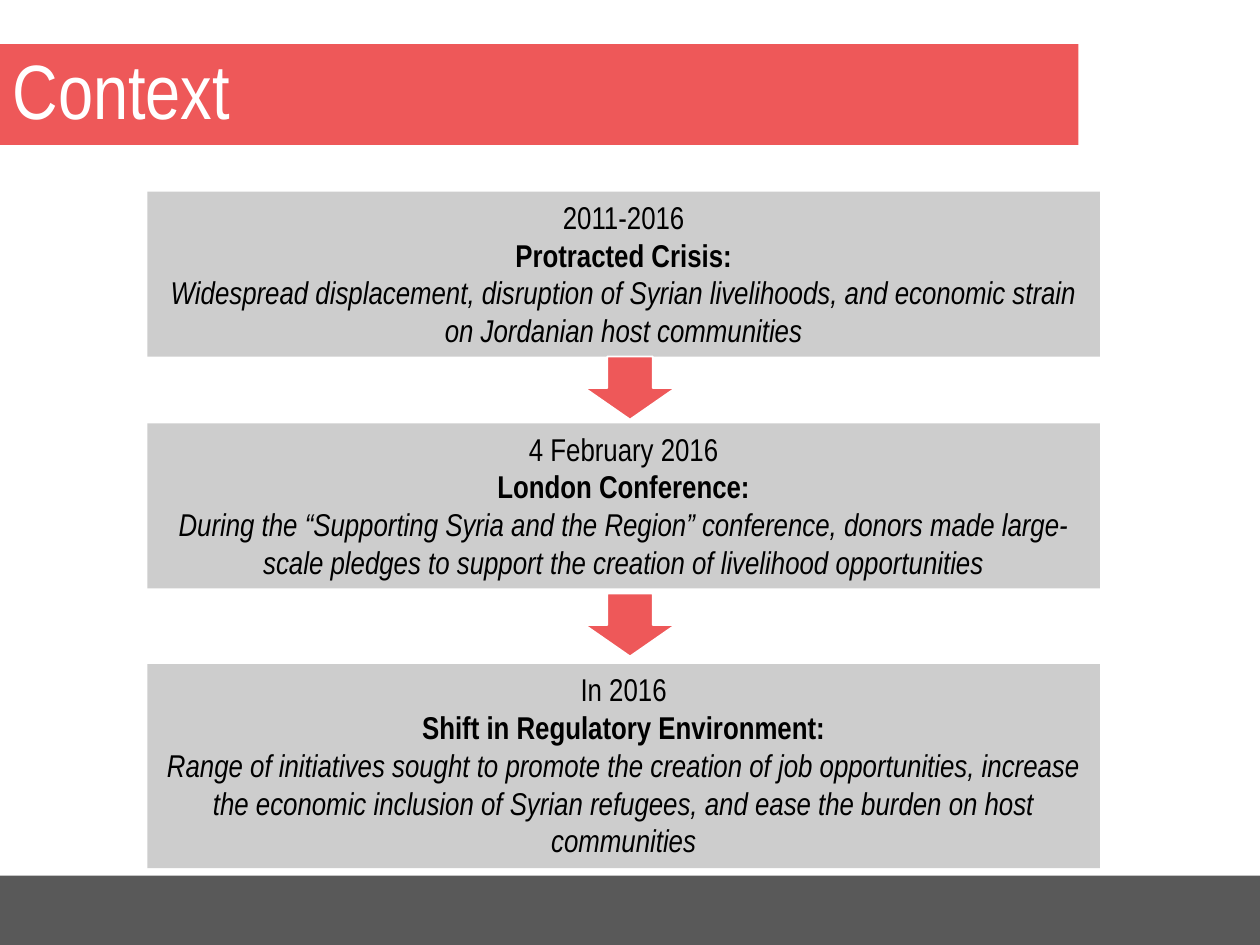
from pptx import Presentation
from pptx.dml.color import RGBColor
from pptx.enum import shapes, text
from pptx.util import Inches, Pt

RED = RGBColor(0xEE, 0x58, 0x59)
GREY = RGBColor(0xCD, 0xCD, 0xCD)
DARK = RGBColor(0x59, 0x59, 0x59)
WHITE = RGBColor(255, 255, 255)
BLACK = RGBColor(0, 0, 0)
FONT = "Arial Narrow"
KIND = shapes.MSO_SHAPE

deck = Presentation()
deck.slide_width, deck.slide_height = Inches(10), Inches(7.5)
slide = deck.slides.add_slide(deck.slide_layouts[5])


def add(kind, left, top, width, height, fill):
    shape = slide.shapes.add_shape(
        kind, Inches(left), Inches(top), Inches(width), Inches(height))
    shape.shadow.inherit = False
    shape.fill.solid()
    shape.fill.fore_color.rgb = fill
    shape.line.fill.background()
    return shape


def style(para, size, color, align):
    para.alignment = align
    para.font.name = FONT
    para.font.size = Pt(size)
    para.font.color.rgb = color


add(KIND.RECTANGLE, 0, 6.95, 10, 0.55, DARK)

title = slide.shapes.title
title.left, title.top = Inches(0), Inches(0.35)
title.width, title.height = Inches(8.56), Inches(0.8)
title.fill.solid()
title.fill.fore_color.rgb = RED
title.text_frame.text = "Context"
title.text_frame.vertical_anchor = text.MSO_ANCHOR.MIDDLE
head = title.text_frame.paragraphs[0]
head.line_spacing = 0.9
style(head, 44, WHITE, text.PP_ALIGN.LEFT)

events = [
    (1.52, 1.31, "2011-2016", "Protracted Crisis:",
     "Widespread displacement, disruption of Syrian livelihoods, and economic "
     "strain on Jordanian host communities"),
    (3.36, 1.31, "4 February 2016", "London Conference:",
     "During the “Supporting Syria and the Region” conference, donors made "
     "large-scale pledges to support the creation of livelihood opportunities"),
    (5.27, 1.62, "In 2016", "Shift in Regulatory Environment:",
     "Range of initiatives sought to promote the creation of job opportunities, "
     "increase the economic inclusion of Syrian refugees, and ease the burden "
     "on host communities"),
]
for top, height, date, name, detail in events:
    box = add(KIND.RECTANGLE, 1.17, top, 7.56, height, GREY)
    frame = box.text_frame
    frame.word_wrap = True
    frame.vertical_anchor = text.MSO_ANCHOR.TOP
    frame.text = "\n".join((date, name, detail))
    for para in frame.paragraphs:
        style(para, 18, BLACK, text.PP_ALIGN.CENTER)
    frame.paragraphs[1].font.bold = True
    frame.paragraphs[2].font.italic = True

for top in (2.72, 4.6):
    arrow = add(KIND.RIGHT_ARROW, 4.75, top, 0.5, 0.72, RED)
    arrow.rotation = 90
    arrow.line.color.rgb = WHITE
    arrow.line.width = Pt(1)

deck.save("out.pptx")
